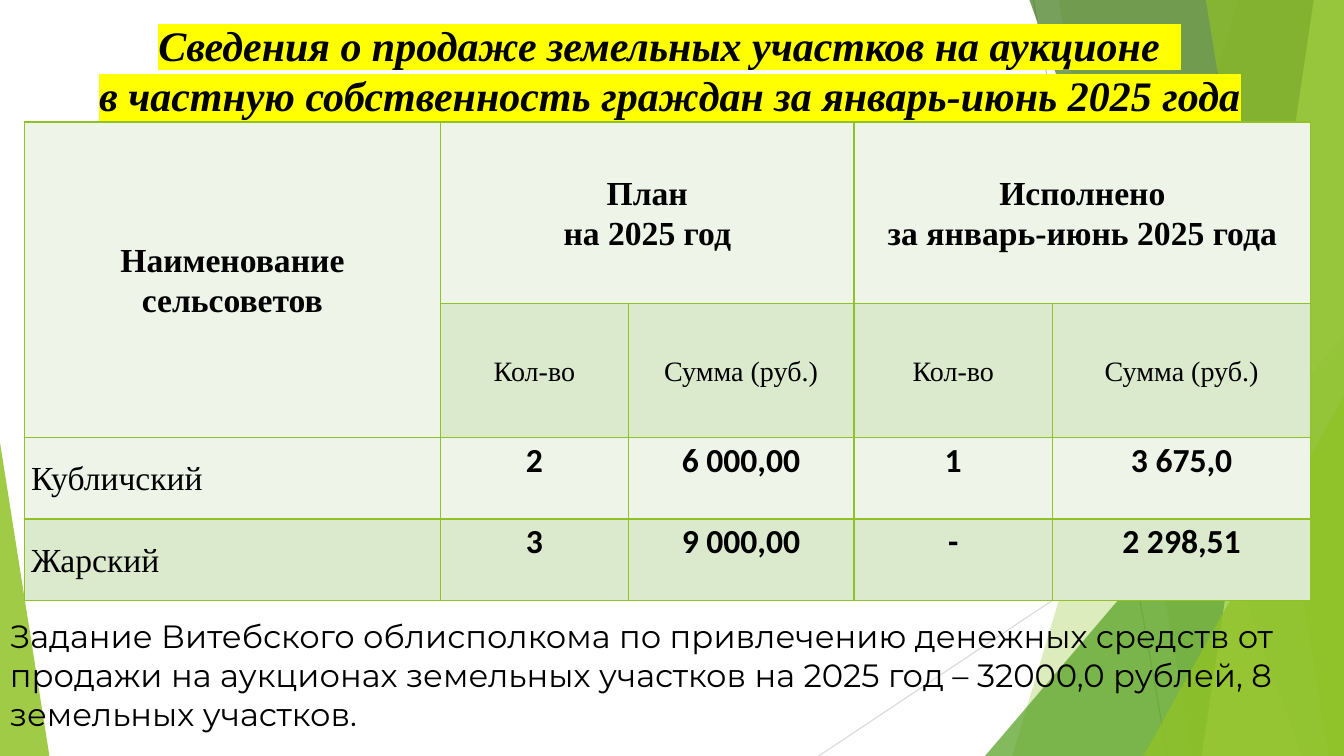
import pptx
import pptx.dml.color
import pptx.enum.shapes
import pptx.enum.text
import pptx.oxml
import pptx.oxml.ns
import pptx.util
from dataclasses import dataclass
from lxml import etree

PX = 9144
WIDTH, HEIGHT = 1333, 750
SHAPE = pptx.enum.shapes.MSO_SHAPE
ALIGN = pptx.enum.text.PP_ALIGN
ANCHOR = pptx.enum.text.MSO_ANCHOR
qn = pptx.oxml.ns.qn


@dataclass(frozen=True)
class Theme:
    text: str = "000000"
    highlight: str = "FFFF00"
    accent: str = "90C226"
    green: str = "54A021"
    dark: str = "3F7819"
    light: str = "C0E474"
    grey: str = "BFBFBF"
    pale_grey: str = "D9D9D9"
    bands: tuple = ("EEF4E8", "DBE9CD")
    serif: str = "Times New Roman"
    sans: str = "Calibri"
    note: str = "Montserrat"
    title_size: int = 30
    head_size: int = 24
    sub_size: int = 20
    note_size: int = 23


def px(n):
    return pptx.util.Emu(n * PX)


def rgb(colour):
    return pptx.dml.color.RGBColor.from_string(colour)


class Deck:
    def __init__(self, theme):
        self.theme = theme
        self.prs = pptx.Presentation()
        self.prs.slide_width, self.prs.slide_height = px(WIDTH), px(HEIGHT)
        self.s = self.prs.slides.add_slide(self.prs.slide_layouts[5])

    def style(self, p, font, size, bold=False, italic=False):
        p.font.name, p.font.size = font, pptx.util.Pt(size)
        p.font.bold, p.font.italic = bold, italic
        p.font.color.rgb = rgb(self.theme.text)

    def line(self, x1, y1, x2, y2, colour):
        ln = self.s.shapes.add_connector(
            pptx.enum.shapes.MSO_CONNECTOR.STRAIGHT, px(x1), px(y1), px(x2), px(y2))
        ln.line.color.rgb = rgb(colour)
        ln.line.width = pptx.util.Pt(0.75)
        etree.SubElement(ln._element.spPr, qn("a:effectLst"))

    def paint(self, sp, colour, alpha):
        sp.shadow.inherit = False
        sp.line.fill.background()
        sp.fill.solid()
        sp.fill.fore_color.rgb = rgb(colour)
        clr = sp._element.spPr.find(qn("a:solidFill")).find(qn("a:srgbClr"))
        etree.SubElement(clr, qn("a:alpha")).set("val", str(alpha * 1000))

    def strip(self, top_x, bottom_x, colour, alpha):
        fb = self.s.shapes.build_freeform(top_x, 0, scale=PX)
        fb.add_line_segments([(WIDTH, 0), (WIDTH, HEIGHT), (bottom_x, HEIGHT)], close=True)
        self.paint(fb.convert_to_shape(), colour, alpha)

    def triangle(self, x, y, w, apex, colour, alpha):
        sp = self.s.shapes.add_shape(
            SHAPE.ISOSCELES_TRIANGLE, px(x), px(y), px(w), px(HEIGHT - y))
        sp.adjustments[0] = apex
        self.paint(sp, colour, alpha)

    def title(self, x, y, w, h, lines, bottom):
        sp = self.s.shapes.title
        self.s.shapes._spTree.append(sp._element)
        sp.left, sp.top, sp.width, sp.height = px(x), px(y), px(w), px(h)
        tf = sp.text_frame
        tf.word_wrap = True
        tf.auto_size = pptx.enum.text.MSO_AUTO_SIZE.NONE
        tf.vertical_anchor = ANCHOR.BOTTOM
        tf.margin_bottom = px(bottom)
        tf.text = "\v".join(lines)
        p = tf.paragraphs[0]
        p.alignment = ALIGN.CENTER
        self.style(p, self.theme.serif, self.theme.title_size, True, True)
        for r in p.runs:
            mark = etree.SubElement(r._r.get_or_add_rPr(), qn("a:highlight"))
            etree.SubElement(mark, qn("a:srgbClr")).set("val", self.theme.highlight)

    def text(self, x, y, w, h, text):
        tf = self.s.shapes.add_textbox(px(x), px(y), px(w), px(h)).text_frame
        tf.word_wrap = True
        tf.text = text
        self.style(tf.paragraphs[0], self.theme.note, self.theme.note_size)

    def table(self, x, y, cols, heights, rows, merges):
        table = self.s.shapes.add_table(
            len(rows), len(cols), px(x), px(y), px(sum(cols)), px(sum(heights))).table
        for col, w in zip(table.columns, cols):
            col.width = px(w)
        for row, h in zip(table.rows, heights):
            row.height = px(h)
        for i, row in enumerate(rows):
            for j, text in enumerate(row):
                self.cell(table.cell(i, j), i, j, text)
        for start, end in merges:
            table.cell(*start).merge(table.cell(*end))

    def cell(self, cell, i, j, text):
        t = self.theme
        cell.fill.solid()
        cell.fill.fore_color.rgb = rgb(t.bands[i % 2])
        cell.margin_left = cell.margin_right = px(7)
        cell.margin_top = cell.margin_bottom = 0
        number = i > 1 and j > 0
        cell.vertical_anchor = ANCHOR.TOP if number else ANCHOR.MIDDLE
        cell.text = text
        for p in cell.text_frame.paragraphs:
            p.alignment = ALIGN.LEFT if i > 1 and j == 0 else ALIGN.CENTER
            p.line_spacing = 1.07
            self.style(p, t.sans if number else t.serif,
                       t.sub_size if i == 1 else t.head_size, number or i == 0)
        for k, side in enumerate(("lnL", "lnR", "lnT", "lnB")):
            ln = etree.Element(qn("a:" + side), w="12700")
            fill = etree.SubElement(ln, qn("a:solidFill"))
            etree.SubElement(fill, qn("a:srgbClr")).set("val", t.accent)
            cell._tc.get_or_add_tcPr().insert(k, ln)


def main():
    t = Theme()
    deck = Deck(t)
    deck.line(1025, 0, 1158, HEIGHT, t.grey)
    deck.line(WIDTH, 403, 812, HEIGHT, t.pale_grey)
    deck.strip(1228, 1004, t.accent, 30)
    deck.strip(1050, 1183, t.accent, 20)
    deck.triangle(977, 333, 356, 1, t.green, 72)
    deck.strip(1021, 1291, t.dark, 70)
    deck.strip(1303, 1192, t.light, 70)
    deck.strip(1196, 1318, t.accent, 65)
    deck.triangle(1134, 393, 199, 1, t.accent, 80)
    deck.triangle(0, 439, 49, 0, t.accent, 85)
    deck.title(86, 21, 1157, 151, [
        "Сведения о продаже земельных участков на аукционе  ",
        "в частную собственность граждан за январь-июнь 2025 года"], 53)
    deck.text(0, 607, WIDTH, 50,
              "Задание Витебского облисполкома по привлечению денежных средств от "
              "продажи на аукционах земельных участков на 2025 год – 32000,0 рублей, "
              "8 земельных участков.")
    deck.table(24, 121, [413, 186, 224, 197, 256], [180, 133, 81, 81], [
        ["Наименование сельсоветов", "План\nна 2025 год", "",
         "Исполнено\nза январь-июнь 2025 года", ""],
        ["", *["Кол-во", "Сумма (руб.)"] * 2],
        ["Кубличский", "2", "6 000,00", "1", "3 675,0"],
        ["Жарский", "3", "9 000,00", "-", "2 298,51"],
    ], [((0, 0), (1, 0)), ((0, 1), (0, 2)), ((0, 3), (0, 4))])
    deck.prs.save("out.pptx")


if __name__ == "__main__":
    main()
